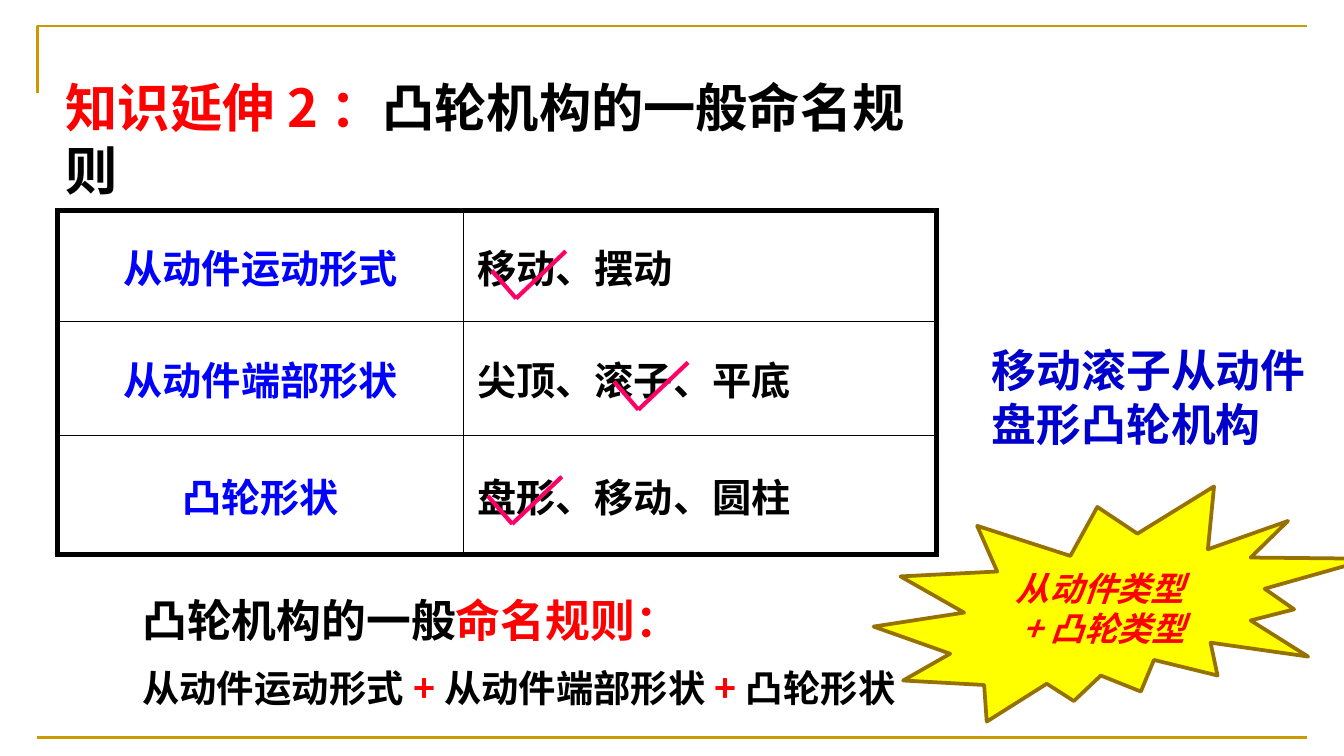
from dataclasses import dataclass
from typing import NamedTuple

from lxml.etree import SubElement
from pptx import Presentation
from pptx.dml.color import RGBColor as RGB
from pptx.enum.shapes import MSO_CONNECTOR as CONN, MSO_SHAPE as SHAPE
from pptx.enum.text import MSO_ANCHOR as ANCHOR, MSO_AUTO_SIZE as AUTO, PP_ALIGN as ALIGN
from pptx.oxml.ns import qn
from pptx.util import Pt


@dataclass(frozen=True)
class Theme:
    sans: str = "Noto Sans CJK SC"
    burst_font: str = "Noto Sans CJK JP"
    gold: str = "CC9900"
    black: str = "000000"
    grid: str = "080000"
    red: str = "FF0000"
    blue: str = "0000FF"
    navy: str = "0000CC"
    pink: str = "FF0066"
    yellow: str = "FFFF00"
    brown: str = "977100"
    title: int = 28
    heading: int = 24
    cell: int = 21
    body: int = 20
    burst: int = 18


class Span(NamedTuple):
    text: str
    color: str


class Box(NamedTuple):
    x: float
    y: float
    w: float
    h: float


class Point(NamedTuple):
    x: float
    y: float


class Row(NamedTuple):
    label: str
    options: str
    height: float
    tick: Point


T = Theme()
FRAME = Box(20, 14, 680, 381.3)
TABLE = Box(31, 113, 470.8, 184.3)
COLS = (217.4, 253.4)
ROWS = (
    Row("从动件运动形式", "移动、摆动", 59, Point(263.5, 144.9)),
    Row("从动件端部形状", "尖顶、滚子、平底", 61.2, Point(329, 204.5)),
    Row("凸轮形状", "盘形、移动、圆柱", 64.1, Point(261.4, 265.7)),
)
TICK = (Point(0, 0), Point(13, 15), Point(39.6, -10.3))


def place(s, box: Box) -> None:
    s.left, s.top, s.width, s.height = map(Pt, box)


def write(p, spans: list[Span], size: int, font: str = T.sans, italic: bool = False) -> None:
    for span in spans:
        r = p.add_run()
        r.text = span.text
        f = r.font
        f.name, f.size, f.bold, f.italic = font, Pt(size), True, italic
        f.color.rgb = RGB.from_string(span.color)
        SubElement(r._r.get_or_add_rPr(), qn("a:ea"), typeface=font)


def set_frame(tf, anchor=ANCHOR.TOP) -> None:
    tf.word_wrap = True
    tf.auto_size = AUTO.NONE
    tf.vertical_anchor = anchor


def stroke(s, color: str, width: float) -> None:
    s.line.color.rgb = RGB.from_string(color)
    s.line.width = Pt(width)


def add_line(shapes, a: Point, b: Point, color: str, width: float) -> None:
    s = shapes.add_connector(CONN.STRAIGHT, Pt(a.x), Pt(a.y), Pt(b.x), Pt(b.y))
    stroke(s, color, width)
    SubElement(s._element.spPr, qn("a:effectLst"))


def add_frame(shapes) -> None:
    x, y, w, h = FRAME
    builder = shapes.build_freeform(x, y + 36, scale=Pt(1))
    builder.add_line_segments([(x, y), (x + w, y)], close=False)
    s = builder.convert_to_shape()
    s.fill.background()
    s.shadow.inherit = False
    stroke(s, T.gold, 1.5)
    add_line(shapes, Point(x, y + h), Point(x + w, y + h), T.gold, 1.5)


def set_borders(cell, outer: dict[str, bool]) -> None:
    tcPr = cell._tc.get_or_add_tcPr()
    for i, (side, is_outer) in enumerate(outer.items()):
        ln = SubElement(tcPr, qn(f"a:ln{side}"), w=str(Pt(3 if is_outer else 0.5)))
        fill = SubElement(ln, qn("a:solidFill"))
        SubElement(fill, qn("a:srgbClr"), val=T.black if is_outer else T.grid)
        tcPr.insert(i, ln)


def add_rule_table(shapes) -> None:
    table = shapes.add_table(len(ROWS), len(COLS), *map(Pt, TABLE)).table
    table.first_row = table.horz_banding = False
    for col, width in zip(table.columns, COLS):
        col.width = Pt(width)
    for i, row in enumerate(ROWS):
        table.rows[i].height = Pt(row.height)
        for j, span in enumerate((Span(row.label, T.blue), Span(row.options, T.black))):
            cell = table.cell(i, j)
            cell.fill.background()
            cell.vertical_anchor = ANCHOR.MIDDLE
            p = cell.text_frame.paragraphs[0]
            p.alignment = ALIGN.LEFT if j else ALIGN.CENTER
            write(p, [span], T.cell)
            set_borders(cell, {"L": j == 0, "R": j == len(COLS) - 1,
                               "T": i == 0, "B": i == len(ROWS) - 1})


def add_tick(shapes, origin: Point) -> None:
    group = shapes.add_group_shape()
    points = [Point(origin.x + d.x, origin.y + d.y) for d in TICK]
    for a, b in zip(points, points[1:]):
        add_line(group.shapes, a, b, T.pink, 2.25)


def fill_title(s) -> None:
    place(s, Box(28, 36.7, 484.6, 74))
    set_frame(s.text_frame)
    p = s.text_frame.paragraphs[0]
    p.alignment = ALIGN.LEFT
    write(p, [Span("知识延伸2：", T.red), Span("凸轮机构的一般命名规则", T.black)], T.title)


def fill_naming_rule(s) -> None:
    place(s, Box(69, 314, 442, 72.7))
    tf = s.text_frame
    set_frame(tf)
    plus = Span("+", T.red)
    motion, end, cam = (Span(row.label, T.black) for row in ROWS)
    lines = (
        ([Span("凸轮机构的一般", T.black), Span("命名规则：", T.red)], T.heading, 0),
        ([motion, plus, end, plus, cam], T.body, 10),
    )
    for i, (spans, size, gap) in enumerate(lines):
        p = tf.add_paragraph() if i else tf.paragraphs[0]
        p.space_before = Pt(gap)
        pPr = p._p.get_or_add_pPr()
        pPr.set("marL", "0")
        pPr.set("indent", "0")
        SubElement(pPr, qn("a:buNone"))
        write(p, spans, size)


def add_example(shapes) -> None:
    tf = shapes.add_textbox(*map(Pt, Box(524.3, 180, 188.6, 65.5))).text_frame
    set_frame(tf)
    write(tf.paragraphs[0], [Span("移动滚子从动件盘形凸轮机构", T.navy)], T.heading)


def add_burst(shapes) -> None:
    s = shapes.add_shape(SHAPE.EXPLOSION2, *map(Pt, Box(468, 260.6, 266.4, 126)))
    s.shadow.inherit = False
    s.fill.solid()
    s.fill.fore_color.rgb = RGB.from_string(T.yellow)
    stroke(s, T.brown, 2)
    set_frame(s.text_frame, ANCHOR.MIDDLE)
    p = s.text_frame.paragraphs[0]
    p.alignment = ALIGN.CENTER
    write(p, [Span("从动件类型+凸轮类型", T.red)], T.burst, T.burst_font, italic=True)


def main() -> None:
    prs = Presentation()
    prs.slide_width, prs.slide_height = Pt(720), Pt(405)
    slide = prs.slides.add_slide(prs.slide_layouts[1])
    shapes = slide.shapes
    add_frame(shapes)
    add_rule_table(shapes)
    fill_title(shapes.title)
    for row in ROWS:
        add_tick(shapes, row.tick)
    fill_naming_rule(slide.placeholders[1])
    add_example(shapes)
    add_burst(shapes)
    prs.save("out.pptx")


if __name__ == "__main__":
    main()
